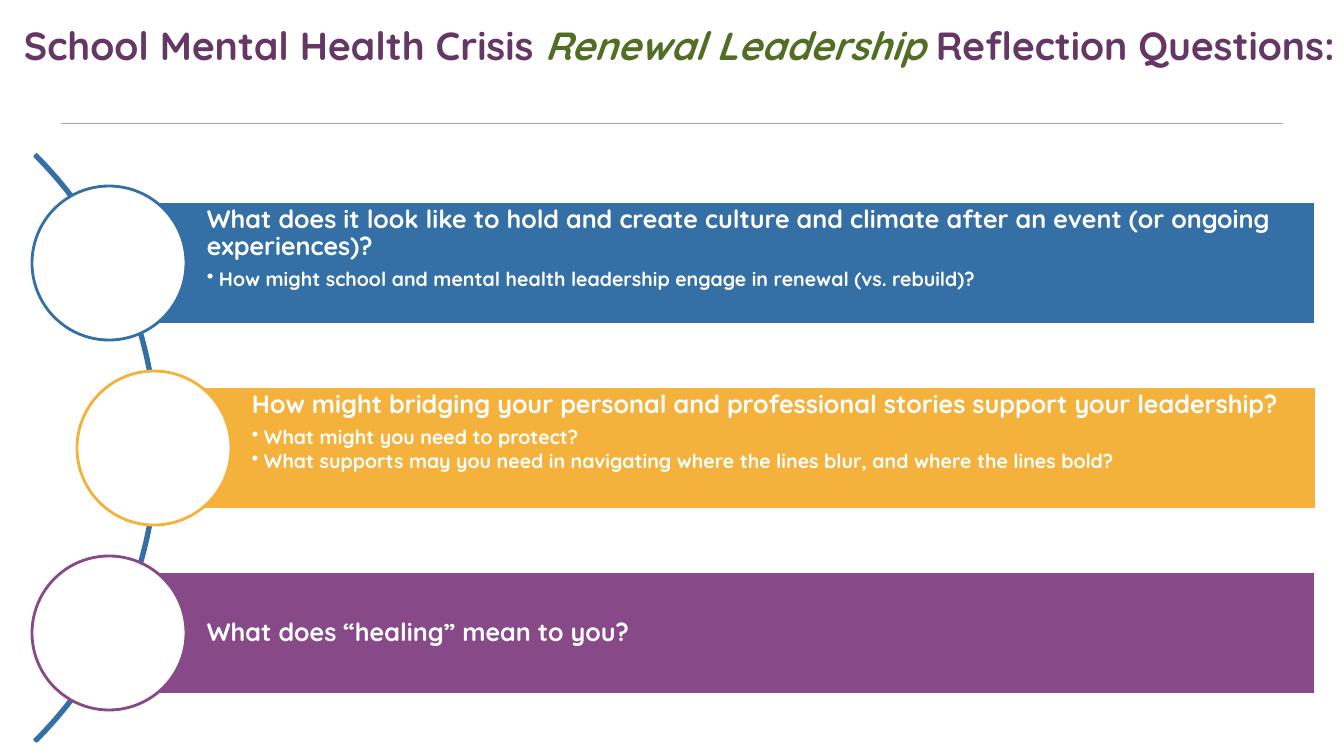
from pptx import Presentation
from pptx.dml.color import RGBColor
from pptx.enum.shapes import MSO_CONNECTOR, MSO_SHAPE
from pptx.enum.text import MSO_ANCHOR, PP_ALIGN
from pptx.oxml.ns import qn
from pptx.util import Emu, Pt
from lxml import etree

# Content
TITLE = [
    ("School Mental Health Crisis ", "plum", False),
    ("Renewal Leadership ", "green", True),
    ("Reflection Questions:", "plum", False),
]
QUESTIONS = [  # circle centre x, colour, question, follow-up points
    (109, "blue",
     "What does it look like to hold and create culture and climate after an event (or ongoing experiences)?",
     ["How might school and mental health leadership engage in renewal (vs. rebuild)?"]),
    (154, "amber",
     "How might bridging your personal and professional stories support your leadership?",
     ["What might you need to protect?",
      "What supports may you need in navigating where the lines blur, and where the lines bold?"]),
    (109, "purple", "What does “healing” mean to you?", []),
]

THEME = {
    "font": "Quicksand",
    "sizes": {"title": 28, "question": 18, "point": 14},
    "colors": {"plum": "653765", "green": "526E25", "blue": "346FA5", "amber": "F4B23D",
               "purple": "874987", "white": "FFFFFF", "grey": "A6A6A6"},
}

# Layout in px
PAGE_WIDTH, PAGE_HEIGHT = 1344, 756
FIRST_CENTRE, ROW_PITCH = 263, 185
BAND_RIGHT, BAND_HEIGHT, CIRCLE = 1316, 123, 154
ARC_CENTRE_X, ARC_SIZE = -257, 830
TEXT_INSET, EDGE_INSET, BULLET_INDENT = 98, 5, 12


def px(length):
    return Emu(round(length * 914400 / 100.8))


def color(name):
    return RGBColor.from_string(THEME["colors"][name])


def add_span(para, text, *, size, tint="white", italic=False):
    span = para.add_run()
    span.text = text
    span.font.name = THEME["font"]
    span.font.size = Pt(THEME["sizes"][size])
    span.font.bold = True
    span.font.italic = italic
    span.font.color.rgb = color(tint)


def set_frame(frame, anchor, left, top, right, bottom):
    frame.word_wrap = True
    frame.vertical_anchor = anchor
    frame.margin_left, frame.margin_top = px(left), px(top)
    frame.margin_right, frame.margin_bottom = px(right), px(bottom)


def add_bullet(para):
    props = para._p.get_or_add_pPr()
    props.set("marL", str(px(BULLET_INDENT)))
    props.set("indent", str(-px(BULLET_INDENT)))
    etree.SubElement(props, qn("a:buChar")).set("char", "•")


def add_box(page, kind, left, top, width, height, fill, line):
    box = page.shapes.add_shape(kind, px(left), px(top), px(width), px(height))
    box.shadow.inherit = False
    if fill:
        box.fill.solid()
        box.fill.fore_color.rgb = color(fill)
    else:
        box.fill.background()
    box.line.color.rgb = color(line)
    box.line.width = Pt(2)
    return box


def add_question(page, row, centre_x, tint, question, points):
    centre_y = FIRST_CENTRE + row * ROW_PITCH
    band = add_box(page, MSO_SHAPE.RECTANGLE, centre_x, centre_y - BAND_HEIGHT / 2,
                   BAND_RIGHT - centre_x, BAND_HEIGHT, tint, "white")
    frame = band.text_frame
    set_frame(frame, MSO_ANCHOR.TOP if points else MSO_ANCHOR.MIDDLE,
              TEXT_INSET, EDGE_INSET, EDGE_INSET, EDGE_INSET)
    for index, text in enumerate([question, *points]):
        para = frame.add_paragraph() if index else frame.paragraphs[0]
        para.alignment = PP_ALIGN.LEFT
        para.line_spacing = 0.9
        para.space_after = Pt(2 if index else 6)
        if index:
            para.level = 1
            add_bullet(para)
        add_span(para, text, size="point" if index else "question")
    add_box(page, MSO_SHAPE.OVAL, centre_x - CIRCLE / 2, centre_y - CIRCLE / 2,
            CIRCLE, CIRCLE, "white", tint)


def main():
    deck = Presentation()
    deck.slide_width, deck.slide_height = px(PAGE_WIDTH), px(PAGE_HEIGHT)
    page = deck.slides.add_slide(deck.slide_layouts[6])

    # Divider under the title
    divider = page.shapes.add_connector(MSO_CONNECTOR.STRAIGHT, px(61), px(124), px(1283), px(124))
    divider.line.color.rgb = color("grey")
    divider.line.width = Pt(0.75)
    etree.SubElement(divider._element.spPr, qn("a:effectLst"))

    # Arc that runs behind the circles, centred on the middle row
    arc_top = FIRST_CENTRE + ROW_PITCH - ARC_SIZE / 2
    arc = add_box(page, MSO_SHAPE.BLOCK_ARC, ARC_CENTRE_X - ARC_SIZE / 2, arc_top,
                  ARC_SIZE, ARC_SIZE, None, "blue")
    for index, value in enumerate((189, 27, 0.003)):
        arc.adjustments[index] = value

    # Question bands with their circles
    for row, entry in enumerate(QUESTIONS):
        add_question(page, row, *entry)

    # Title
    title = page.shapes.add_textbox(px(24), px(6), px(1320), px(78))
    set_frame(title.text_frame, MSO_ANCHOR.MIDDLE, 0, 7, 0, 7)
    for text, tint, italic in TITLE:
        add_span(title.text_frame.paragraphs[0], text, size="title", tint=tint, italic=italic)

    deck.save("out.pptx")


if __name__ == "__main__":
    main()
